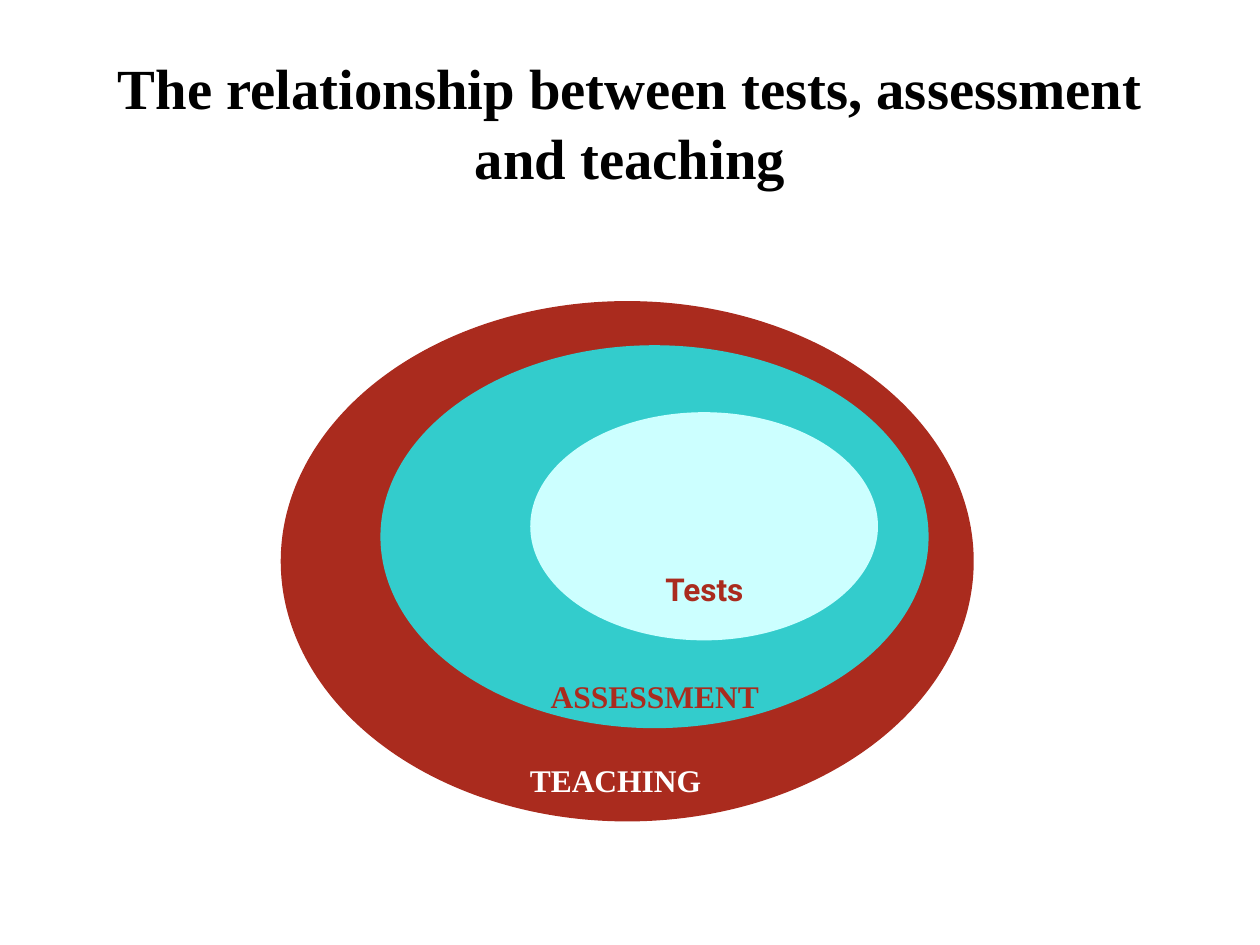
from pptx import Presentation
from pptx import util as u
from pptx.dml.color import RGBColor
from pptx.enum import shapes, text

BLACK = RGBColor(0x00, 0x00, 0x00)
WHITE = RGBColor(0xFF, 0xFF, 0xFF)
RED = RGBColor(0xAA, 0x2B, 0x1E)
TEAL = RGBColor(0x33, 0xCC, 0xCC)
PALE = RGBColor(0xCC, 0xFF, 0xFF)
SERIF = "Times New Roman"
SANS = "Roboto"


class Deck:
    size = 18
    wide = 5
    high = 1.02

    def __init__(self, slide):
        self.slide = slide

    def style(self, frame, words, size, face, color):
        frame.text = words
        frame.word_wrap = True
        para = frame.paragraphs[0]
        para.alignment = text.PP_ALIGN.CENTER
        font = para.font
        font.name, font.size, font.bold = face, u.Pt(size), True
        font.color.rgb = color
        return para

    def title(self, words):
        shape = self.slide.shapes.title
        shape.left, shape.top = u.Cm(1.27), u.Cm(0.84)
        shape.width, shape.height = u.Cm(22.86), u.Cm(3.18)
        frame = shape.text_frame
        frame.auto_size = text.MSO_AUTO_SIZE.NONE
        frame.vertical_anchor = text.MSO_ANCHOR.MIDDLE
        para = self.style(frame, words, 32.4, SERIF, BLACK)
        para.line_spacing = 1.04

    def oval(self, left, top, width, height, color):
        shape = self.slide.shapes.add_shape(
            shapes.MSO_SHAPE.OVAL,
            u.Cm(left), u.Cm(top), u.Cm(width), u.Cm(height))
        shape.shadow.inherit = False
        shape.fill.solid()
        shape.fill.fore_color.rgb = color
        shape.line.fill.background()

    def label(self, words, mid, top, face, color):
        box = self.slide.shapes.add_textbox(
            u.Cm(mid - self.wide / 2), u.Cm(top),
            u.Cm(self.wide), u.Cm(self.high))
        self.style(box.text_frame, words, self.size, face, color)


def main():
    prs = Presentation()
    prs.slide_width, prs.slide_height = u.Cm(25.4), u.Cm(19.05)
    deck = Deck(prs.slides.add_slide(prs.slide_layouts[5]))
    deck.title("The relationship between tests, assessment and teaching")
    deck.oval(5.66, 6.07, 13.97, 10.49, RED)
    deck.oval(7.67, 6.96, 11.05, 7.72, TEAL)
    deck.oval(10.69, 8.31, 7.01, 4.6, PALE)
    deck.label("Tests", 14.2, 11.36, SANS, RED)
    deck.label("ASSESSMENT", 13.2, 13.52, SERIF, RED)
    deck.label("TEACHING", 12.41, 15.22, SERIF, WHITE)
    prs.save("out.pptx")


if __name__ == "__main__":
    main()
